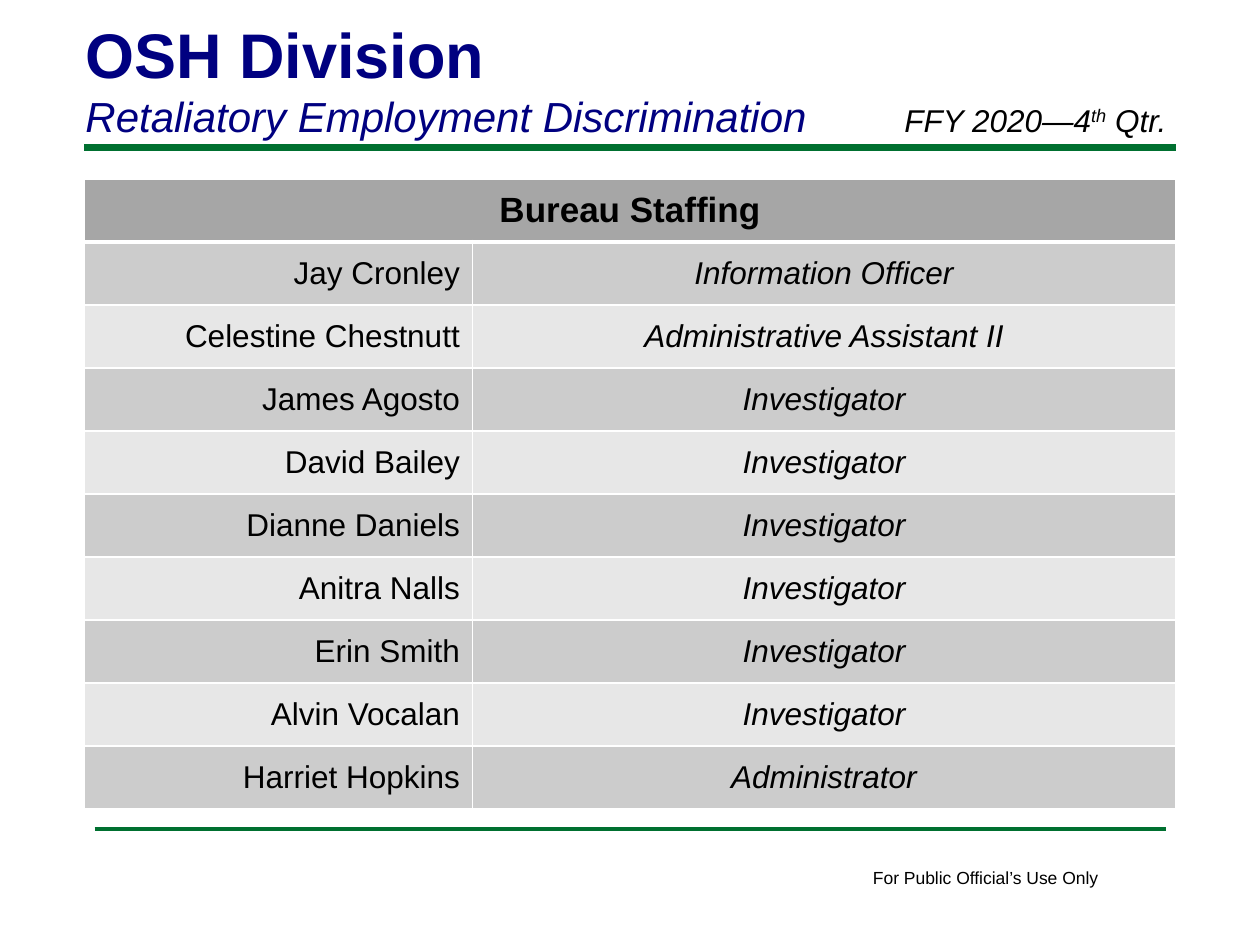
from dataclasses import dataclass

from lxml import etree
from pptx import Presentation
from pptx.dml.color import RGBColor
from pptx.enum.shapes import MSO_CONNECTOR
from pptx.enum.text import MSO_ANCHOR, MSO_AUTO_SIZE, PP_ALIGN
from pptx.oxml.ns import qn
from pptx.util import Inches, Pt

STRAIGHT = MSO_CONNECTOR.STRAIGHT
TOP, MIDDLE, BOTTOM = MSO_ANCHOR.TOP, MSO_ANCHOR.MIDDLE, MSO_ANCHOR.BOTTOM
LEFT, CENTER, RIGHT = PP_ALIGN.LEFT, PP_ALIGN.CENTER, PP_ALIGN.RIGHT
GROW = MSO_AUTO_SIZE.SHAPE_TO_FIT_TEXT

FONT = "Arial"
COLORS = {
    "rule": "007030",
    "title": "000080",
    "text": "000000",
    "header": "A6A6A6",
    "odd": "CCCCCC",
    "even": "E7E7E7",
    "border": "FFFFFF",
}

# Table grid, in inches
SLIDE_W, SLIDE_H = 10, 7.5
MARGIN = 0.67
TABLE_TOP = 1.42
ROW_H = 0.5
NAME_W = 3.08
ROLE_W = SLIDE_W - 2 * MARGIN - NAME_W


@dataclass
class Rule:
    inset: float
    y: float
    width: float


@dataclass
class Line:
    text: str
    size: float
    color: str = "text"
    bold: bool = False
    italic: bool = False
    align: PP_ALIGN = LEFT
    superscript: str = ""
    tail: str = ""


@dataclass
class Label:
    box: tuple[float, float, float, float]
    lines: list[Line]
    anchor: MSO_ANCHOR = TOP
    wrap: bool = True


RULES = [Rule(MARGIN, 1.17, 4), Rule(0.75, 6.58, 2)]

LABELS = [
    Label((6.83, 6.83, 2.01, 0.27),
          [Line("For Public Official’s Use Only", 10)], wrap=False),
    Label((0.58, 0.06, 8.25, 1.11),
          [Line("OSH Division", 36, "title", bold=True),
           Line("Retaliatory Employment Discrimination", 24, "title", italic=True)],
          anchor=BOTTOM),
    Label((7.08, 0.75, 2.5, 0.4),
          [Line("FFY 2020—4", 18, italic=True, superscript="th", tail=" Qtr.")]),
]

STAFF = [
    ("Jay Cronley", "Information Officer"),
    ("Celestine Chestnutt", "Administrative Assistant II"),
    ("James Agosto", "Investigator"),
    ("David Bailey", "Investigator"),
    ("Dianne Daniels", "Investigator"),
    ("Anitra Nalls", "Investigator"),
    ("Erin Smith", "Investigator"),
    ("Alvin Vocalan", "Investigator"),
    ("Harriet Hopkins", "Administrator"),
]


def rgb(name: str) -> RGBColor:
    return RGBColor.from_string(COLORS[name])


def write_line(p, line: Line) -> None:
    p.alignment = line.align
    p.font.name = FONT
    p.font.size = Pt(line.size)
    p.font.bold = line.bold
    p.font.italic = line.italic
    p.font.color.rgb = rgb(line.color)
    p.add_run().text = line.text
    if line.superscript:
        r = p.add_run()
        r.text = line.superscript
        r.font._element.set("baseline", "30000")
    if line.tail:
        p.add_run().text = line.tail


def add_rule(s, rule: Rule) -> None:
    line = s.shapes.add_connector(
        STRAIGHT, Inches(rule.inset), Inches(rule.y),
        Inches(SLIDE_W - rule.inset), Inches(rule.y))
    line.line.color.rgb = rgb("rule")
    line.line.width = Pt(rule.width)
    etree.SubElement(line._element.spPr, qn("a:effectLst"))


def add_label(s, label: Label) -> None:
    tf = s.shapes.add_textbox(*map(Inches, label.box)).text_frame
    tf.word_wrap = label.wrap
    tf.auto_size = GROW
    tf.vertical_anchor = label.anchor
    for i, line in enumerate(label.lines):
        write_line(tf.add_paragraph() if i else tf.paragraphs[0], line)


def set_borders(cell, widths: dict[str, float]) -> None:
    tc_pr = cell._tc.get_or_add_tcPr()
    for side in "LRTB":
        ln = etree.SubElement(tc_pr, qn(f"a:ln{side}"), w=str(Pt(widths.get(side, 1))))
        fill = etree.SubElement(ln, qn("a:solidFill"))
        etree.SubElement(fill, qn("a:srgbClr"), val=COLORS["border"])


def style_cell(cell, fill: str, borders: dict[str, float]) -> None:
    set_borders(cell, borders)
    cell.fill.solid()
    cell.fill.fore_color.rgb = rgb(fill)
    cell.vertical_anchor = MIDDLE


def add_staff_table(s) -> None:
    n_rows = len(STAFF) + 1
    table = s.shapes.add_table(
        n_rows, 2, Inches(MARGIN), Inches(TABLE_TOP),
        Inches(NAME_W + ROLE_W), Inches(n_rows * ROW_H)).table
    for column, width in zip(table.columns, (NAME_W, ROLE_W)):
        column.width = Inches(width)
    for row in table.rows:
        row.height = Inches(ROW_H)

    # Header across both columns, set off by a thicker border
    header = table.cell(0, 0)
    header.merge(table.cell(0, 1))
    for cell in table.rows[0].cells:
        style_cell(cell, "header", {"B": 3})
    write_line(header.text_frame.paragraphs[0],
               Line("Bureau Staffing", 20, bold=True, align=CENTER))

    # Banded staff rows
    for i, (name, role) in enumerate(STAFF, start=1):
        lines = (Line(name, 18, align=RIGHT),
                 Line(role, 18, italic=True, align=CENTER))
        for cell, line in zip(table.rows[i].cells, lines):
            style_cell(cell, "odd" if i % 2 else "even", {"T": 3} if i == 1 else {})
            write_line(cell.text_frame.paragraphs[0], line)


def main() -> None:
    prs = Presentation()
    prs.slide_width, prs.slide_height = Inches(SLIDE_W), Inches(SLIDE_H)
    s = prs.slides.add_slide(prs.slide_layouts[6])
    for rule in RULES:
        add_rule(s, rule)
    footer, *headings = LABELS
    add_label(s, footer)
    add_staff_table(s)
    for label in headings:
        add_label(s, label)
    prs.save("out.pptx")


if __name__ == "__main__":
    main()
